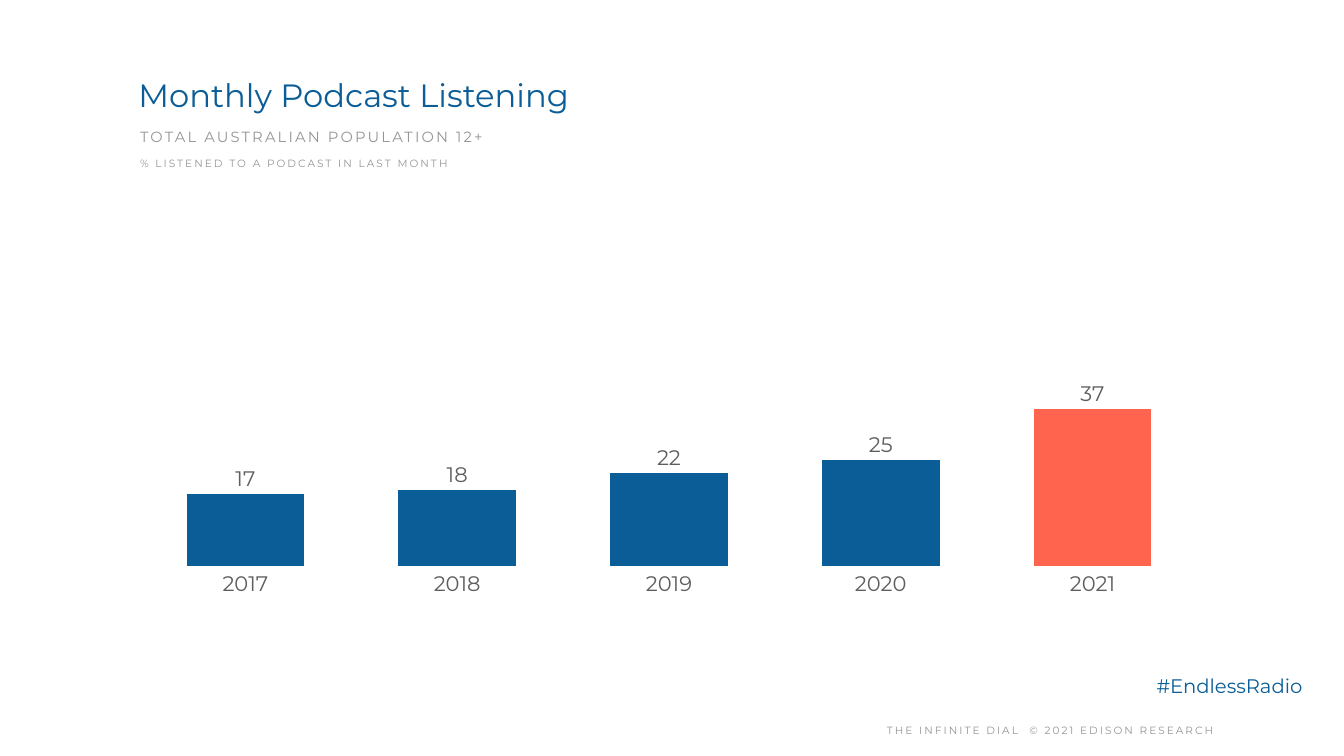
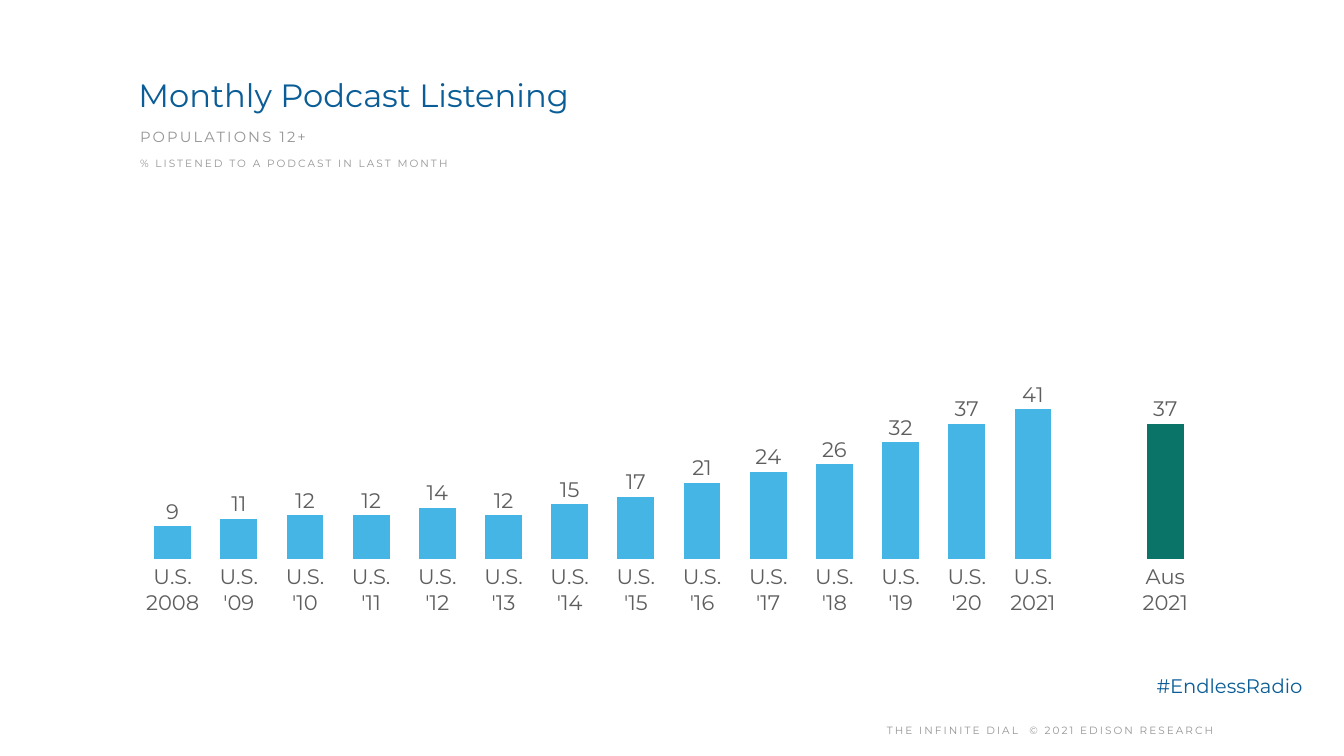
from lxml.etree import SubElement
from pptx import Presentation
from pptx.chart.data import CategoryChartData
from pptx.dml.color import RGBColor
from pptx.enum.chart import (XL_CHART_TYPE, XL_LABEL_POSITION, XL_TICK_LABEL_POSITION,
                             XL_TICK_MARK)
from pptx.enum.text import MSO_ANCHOR, PP_ALIGN
from pptx.oxml.ns import qn
from pptx.util import Inches, Pt

SLIDE_W, SLIDE_H = Inches(26.67), Inches(15)
FONT = "Montserrat"
NAVY = RGBColor(0x0A, 0x5D, 0x96)
CORAL = RGBColor(0xFF, 0x64, 0x4E)
SKY = RGBColor(0x45, 0xB5, 0xE5)
GREEN = RGBColor(0x0B, 0x74, 0x68)
PALE_GRAY = RGBColor(0x95, 0x95, 0x95)
DARK_GRAY = RGBColor(0x5E, 0x5E, 0x5E)

TITLE = "Monthly Podcast Listening"
QUESTION = "% LISTENED TO A PODCAST IN LAST MONTH"
HASHTAG = "#EndlessRadio"
COPYRIGHT = "THE INFINITE DIAL  © 2021 EDISON RESEARCH"

AUSTRALIA = {"2017": 17, "2018": 18, "2019": 22, "2020": 25, "2021": 37}
US_YEARS = ["2008", *(f"'{year:02}" for year in range(9, 21)), "2021"]
US_SHARES = [9, 11, 12, 12, 14, 12, 15, 17, 21, 24, 26, 32, 37, 41]
COUNTRIES = {f"U.S.\n{year}": share for year, share in zip(US_YEARS, US_SHARES)}
COUNTRIES.update({"": None, "Aus\n2021": 37})


def place(left, top, width, height):
    """Turn percentages of the slide's size into lengths."""
    return (int(SLIDE_W * left / 100), int(SLIDE_H * top / 100),
            int(SLIDE_W * width / 100), int(SLIDE_H * height / 100))


def style_font(font, size, color):
    font.name = FONT
    font.size = Pt(size)
    font.color.rgb = color


def add_text(slide, text, area, size, color=PALE_GRAY, tracking=0, line_spacing=1.2,
             anchor=MSO_ANCHOR.MIDDLE, align=PP_ALIGN.LEFT):
    """Add a text box; tracking is the letter spacing in points."""
    frame = slide.shapes.add_textbox(*place(*area)).text_frame
    frame.word_wrap = True
    frame.vertical_anchor = anchor
    frame.margin_left = frame.margin_right = Inches(0.08)
    frame.margin_top = frame.margin_bottom = Inches(0.08)
    paragraph = frame.paragraphs[0]
    paragraph.alignment = align
    paragraph.line_spacing = line_spacing
    run = paragraph.add_run()
    run.text = text
    style_font(run.font, size, color)
    if tracking:
        run._r.get_or_add_rPr().set("spc", str(round(tracking * 100)))


def add_heading(slide, population):
    add_text(slide, TITLE, (10, 9.4, 81.3, 8.2), 46, NAVY,
             line_spacing=1, anchor=MSO_ANCHOR.TOP)
    add_text(slide, population, (10.12, 15.87, 84.55, 3.87), 21, tracking=3.1)
    add_text(slide, QUESTION, (10.12, 19.87, 27.07, 3.07), 15, tracking=2.9)


def add_footer(slide):
    add_text(slide, COPYRIGHT, (56.06, 94.73, 44.17, 3.53), 15, tracking=2.9,
             align=PP_ALIGN.CENTER)
    add_text(slide, HASHTAG, (85.75, 88.33, 12.34, 4.53), 28, NAVY,
             line_spacing=1.1, anchor=MSO_ANCHOR.TOP)


def fix_plot_area(chart, **shares):
    """Pin the inner plot area to shares (x, y, w, h) of the chart."""
    plot_area = chart._chartSpace.chart.plotArea
    for old in plot_area.findall(qn("c:layout")):
        plot_area.remove(old)
    layout = SubElement(plot_area, qn("c:layout"))
    plot_area.insert(0, layout)
    manual = SubElement(layout, qn("c:manualLayout"))
    settings = {"layoutTarget": "inner", "xMode": "edge", "yMode": "edge", **shares}
    for tag, value in settings.items():
        SubElement(manual, qn(f"c:{tag}")).set("val", str(value))


def add_share_chart(slide, shares, area, plot_top_height, color, latest_color):
    """Draw a column for each share, the last one in its own colour."""
    data = CategoryChartData(number_format="General")
    data.categories = list(shares)
    data.add_series("Series 1", list(shares.values()))
    chart = slide.shapes.add_chart(XL_CHART_TYPE.COLUMN_CLUSTERED, *place(*area), data).chart
    chart.has_legend = False
    chart.has_title = False
    style_font(chart.font, 10, PALE_GRAY)
    top, height = plot_top_height
    fix_plot_area(chart, x=0.014, y=top, w=0.981, h=height)

    years = chart.category_axis
    years.tick_label_position = XL_TICK_LABEL_POSITION.LOW
    years.major_tick_mark = years.minor_tick_mark = XL_TICK_MARK.NONE
    years.has_major_gridlines = False
    years.format.line.fill.background()
    style_font(years.tick_labels.font, 30, DARK_GRAY)

    percent = chart.value_axis
    percent.minimum_scale, percent.maximum_scale, percent.major_unit = 0, 100, 20
    percent.has_major_gridlines = False
    percent.visible = False

    plot = chart.plots[0]
    plot.gap_width, plot.overlap = 80, -10
    plot.vary_by_categories = False
    series = plot.series[0]
    latest = series.points[len(shares) - 1]
    for columns, fill_color in ((series, color), (latest, latest_color)):
        columns.format.fill.solid()
        columns.format.fill.fore_color.rgb = fill_color

    labels = series.data_labels
    labels.show_value = True
    labels.position = XL_LABEL_POSITION.OUTSIDE_END
    labels.number_format = "#,##0"
    labels.number_format_is_linked = False
    style_font(labels.font, 30, DARK_GRAY)


def main():
    deck = Presentation()
    deck.slide_width, deck.slide_height = SLIDE_W, SLIDE_H
    blank = deck.slide_layouts[6]
    pages = [
        ("TOTAL AUSTRALIAN POPULATION 12+", AUSTRALIA,
         (9.26, 10, 80.31, 70.73), (0.123, 0.795), NAVY, CORAL),
        ("POPULATIONS 12+", COUNTRIES,
         (9.26, 17.6, 80.31, 65.27), (0.123, 0.741), SKY, GREEN),
    ]
    for population, *chart_settings in pages:
        slide = deck.slides.add_slide(blank)
        add_footer(slide)
        add_share_chart(slide, *chart_settings)
        add_heading(slide, population)
    deck.save("out.pptx")


if __name__ == "__main__":
    main()
